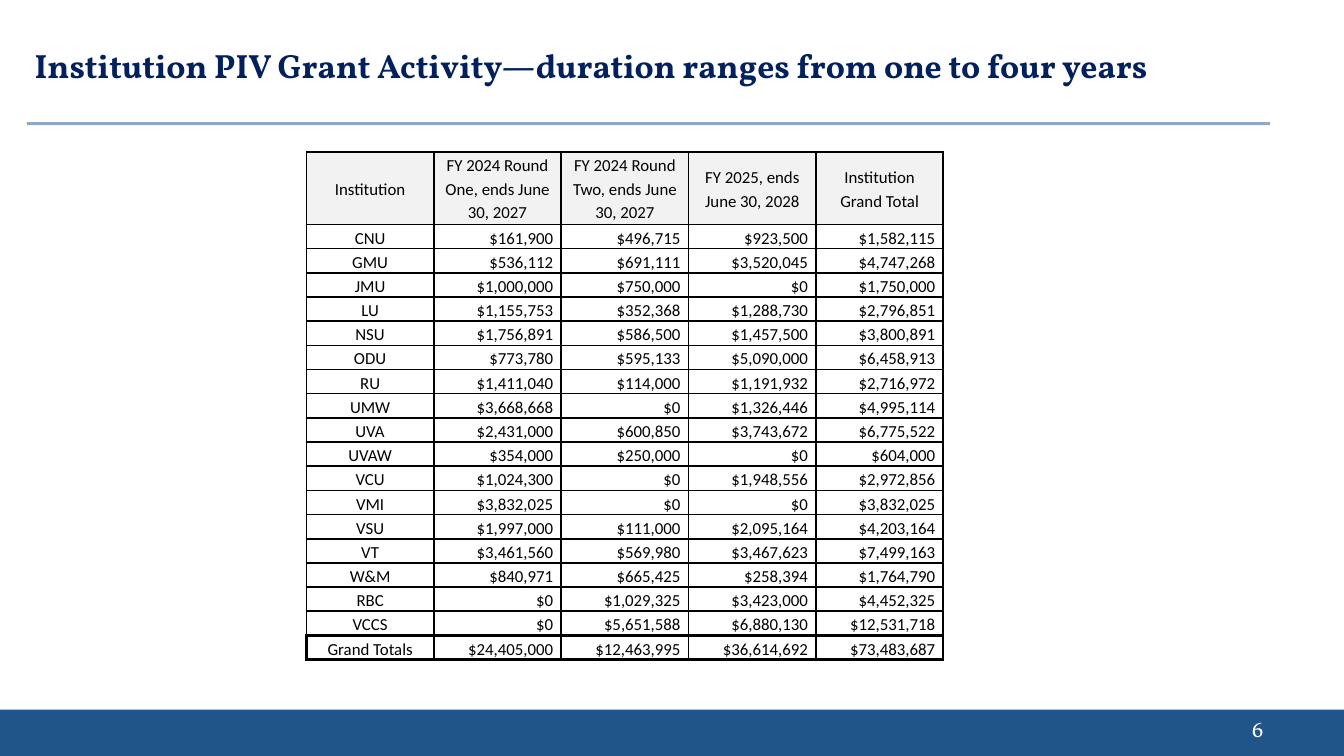
from dataclasses import dataclass

from lxml import etree
from pptx import Presentation
from pptx.dml.color import RGBColor
from pptx.enum import shapes, text
from pptx.oxml import ns
from pptx.util import Inches, Pt

NAVY = RGBColor(0x00, 0x20, 0x60)
BLUE = RGBColor(0x20, 0x55, 0x8A)
GRAY = RGBColor(0xF2, 0xF2, 0xF2)
BLACK = RGBColor(0, 0, 0)
WHITE = RGBColor(255, 255, 255)

LEFT, MID, RIGHT = text.PP_ALIGN.LEFT, text.PP_ALIGN.CENTER, text.PP_ALIGN.RIGHT
TOP, CORE, LOW = (text.MSO_ANCHOR.TOP, text.MSO_ANCHOR.MIDDLE,
                  text.MSO_ANCHOR.BOTTOM)
THIN, THICK = 1, 2.25


@dataclass
class Grant:
    name: str
    first: int
    second: int
    third: int
    total: int

    def texts(self) -> list[str]:
        sums = (self.first, self.second, self.third, self.total)
        return [self.name] + [f"${amount:,}" for amount in sums]


HEADS = ["Institution", "FY 2024 Round One, ends June 30, 2027",
         "FY 2024 Round Two, ends June 30, 2027",
         "FY 2025, ends June 30, 2028", "Institution Grand Total"]
GRANTS = [
    Grant("CNU", 161900, 496715, 923500, 1582115),
    Grant("GMU", 536112, 691111, 3520045, 4747268),
    Grant("JMU", 1000000, 750000, 0, 1750000),
    Grant("LU", 1155753, 352368, 1288730, 2796851),
    Grant("NSU", 1756891, 586500, 1457500, 3800891),
    Grant("ODU", 773780, 595133, 5090000, 6458913),
    Grant("RU", 1411040, 114000, 1191932, 2716972),
    Grant("UMW", 3668668, 0, 1326446, 4995114),
    Grant("UVA", 2431000, 600850, 3743672, 6775522),
    Grant("UVAW", 354000, 250000, 0, 604000),
    Grant("VCU", 1024300, 0, 1948556, 2972856),
    Grant("VMI", 3832025, 0, 0, 3832025),
    Grant("VSU", 1997000, 111000, 2095164, 4203164),
    Grant("VT", 3461560, 569980, 3467623, 7499163),
    Grant("W&M", 840971, 665425, 258394, 1764790),
    Grant("RBC", 0, 1029325, 3423000, 4452325),
    Grant("VCCS", 0, 5651588, 6880130, 12531718),
    Grant("Grand Totals", 24405000, 12463995, 36614692, 73483687),
]


def write(frame, words: str, *, size: float, font: str, color: RGBColor,
          align=LEFT, bold: bool = False, space: float = 1.0) -> None:
    frame.word_wrap = True
    para = frame.paragraphs[0]
    para.alignment, para.line_spacing = align, space
    run = para.add_run()
    run.text = words
    run.font.size, run.font.name, run.font.bold = Pt(size), font, bold
    run.font.color.rgb = color


def add_box(slide, x: float, y: float, w: float, h: float, words: str,
            anchor=TOP, **style) -> None:
    box = slide.shapes.add_textbox(Inches(x), Inches(y), Inches(w), Inches(h))
    box.text_frame.vertical_anchor = anchor
    write(box.text_frame, words, **style)


def add_edges(cell, **widths: float) -> None:
    props = cell._tc.get_or_add_tcPr()
    for spot, side in enumerate(("L", "R", "T", "B")):
        edge = etree.Element(ns.qn(f"a:ln{side}"), w=str(Pt(widths[side])))
        fill = etree.SubElement(edge, ns.qn("a:solidFill"))
        etree.SubElement(fill, ns.qn("a:srgbClr"), val=str(BLACK))
        props.insert(spot, edge)


def add_grid(slide, x: float, y: float, width: float, tall: float) -> None:
    rows = [HEADS] + [grant.texts() for grant in GRANTS]
    last = len(rows) - 1
    grid = slide.shapes.add_table(
        len(rows), len(HEADS), Inches(x), Inches(y),
        Inches(width), Inches(tall * (last + 3))).table
    grid.first_row = grid.horz_banding = False
    for col in grid.columns:
        col.width = Inches(width / len(HEADS))
    for r, words in enumerate(rows):
        # The heading holds three lines of text
        grid.rows[r].height = Inches(tall * (1 if r else 3))
        for c, word in enumerate(words):
            cell = grid.cell(r, c)
            cell.margin_left = cell.margin_right = Inches(0.06)
            cell.margin_top = cell.margin_bottom = 0
            cell.vertical_anchor = LOW if r else CORE
            if r:
                cell.fill.background()
            else:
                cell.fill.solid()
                cell.fill.fore_color.rgb = GRAY
            write(cell.text_frame, word, size=9, font="Calibri", color=BLACK,
                  align=RIGHT if r and c else MID, space=1.15)
            # Heavy lines frame the totals
            add_edges(cell, L=THICK if r == last and c == 0 else THIN, R=THIN,
                      T=THICK if r == last else THIN,
                      B=THICK if r >= last - 1 else THIN)


def add_rule(slide, x: float, y: float, end: float) -> None:
    rule = slide.shapes.add_connector(
        shapes.MSO_CONNECTOR.STRAIGHT, Inches(x), Inches(y), Inches(end), Inches(y))
    rule.line.color.rgb, rule.line.width = BLUE, Pt(1.5)
    props = rule._element.spPr
    tint = props.find(".//" + ns.qn("a:srgbClr"))
    etree.SubElement(tint, ns.qn("a:alpha"), val="50000")
    etree.SubElement(props, ns.qn("a:effectLst"))


def main() -> None:
    # Wide 16:9 slide
    deck = Presentation()
    deck.slide_width, deck.slide_height = Inches(10), Inches(10 * 9 / 16)
    slide = deck.slides.add_slide(deck.slide_layouts[6])

    # Footer band and title rule
    band = slide.shapes.add_shape(shapes.MSO_SHAPE.RECTANGLE, Inches(-0.01),
                                  Inches(5.28), Inches(10.01), Inches(0.35))
    band.shadow.inherit = False
    band.fill.solid()
    band.fill.fore_color.rgb = BLUE
    band.line.fill.background()
    add_rule(slide, 0.2, 0.92, 9.45)

    # Page number
    add_box(slide, 7.17, 5.27, 2.33, 0.3, "6", anchor=CORE, size=12,
            font="Vollkorn", color=WHITE, align=RIGHT)

    # Grant table
    add_grid(slide, 2.28, 1.13, 4.74, 0.18)

    # Title
    add_box(slide, 0.16, 0.24, 9.07, 0.67,
            "Institution PIV Grant Activity—duration ranges from one to four years",
            size=18, font="Vollkorn", color=NAVY, bold=True, space=1.15)

    deck.save("out.pptx")


if __name__ == "__main__":
    main()
